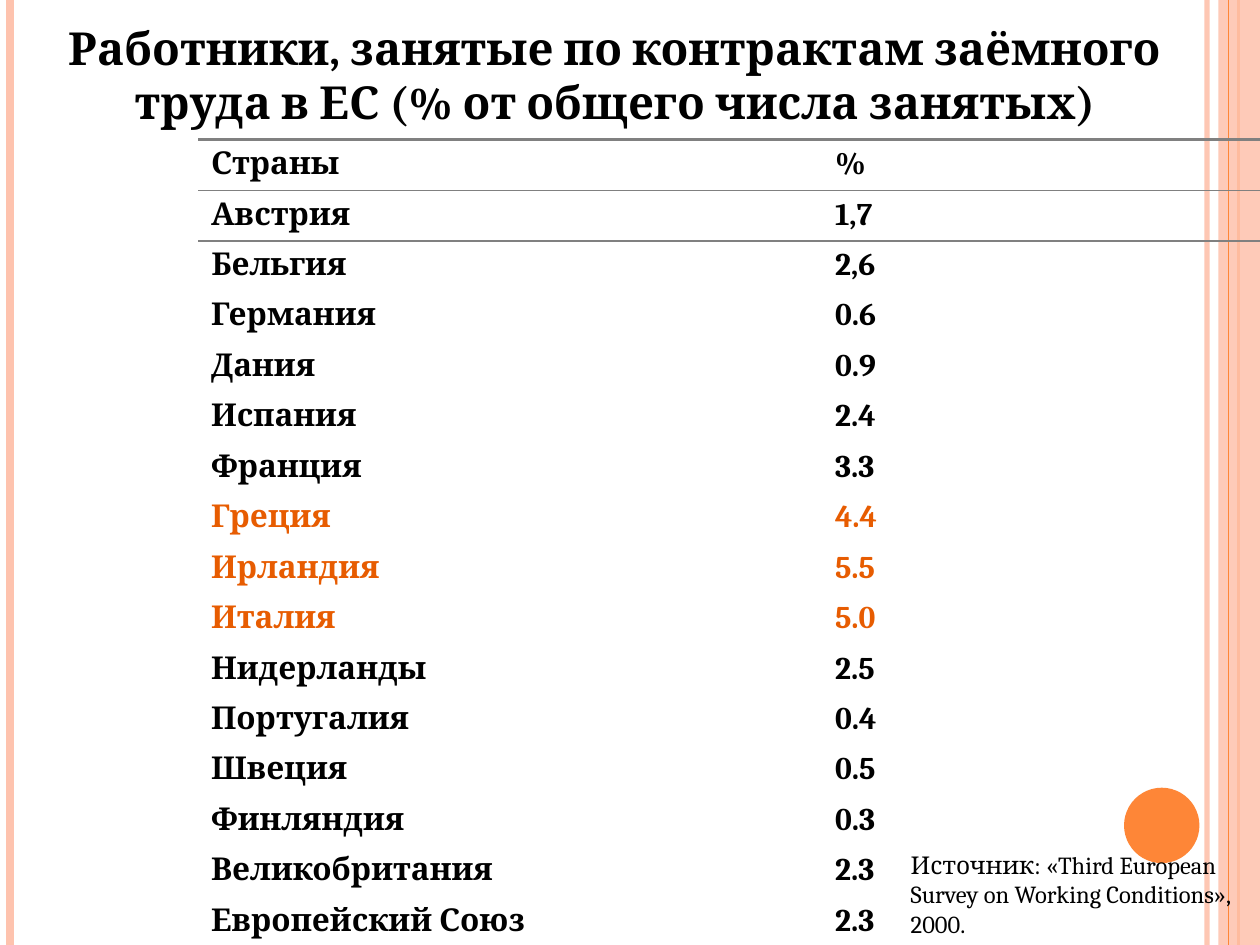
from lxml.etree import SubElement
from pptx import Presentation
from pptx.dml.color import RGBColor
from pptx.enum.shapes import MSO_CONNECTOR as Connector, MSO_SHAPE as Shape
from pptx.enum.text import MSO_ANCHOR as Anchor, PP_ALIGN as Align
from pptx.oxml.ns import qn
from pptx.util import Cm, Pt

COLORS = {"text": "000000", "accent": "E75C01", "rule": "808080",
          "orange": "FE8637", "peach": "FEC3AE"}
FONT = "Cambria"
WIDTH, HEIGHT = 25.4, 19.05
NO_STYLE = "{2D5ABB26-0587-4C30-8999-92F81FD0307C}"

TITLE = "Работники, занятые по контрактам заёмного труда в ЕС (% от общего числа занятых)"
SOURCE = "Источник: «Third European Survey on Working Conditions», 2000."
ROWS = [
    ("Страны", "%"),
    ("Австрия", "1,7"),
    ("Бельгия", "2,6"),
    ("Германия", "0.6"),
    ("Дания", "0.9"),
    ("Испания", "2.4"),
    ("Франция", "3.3"),
    ("Греция", "4.4"),
    ("Ирландия", "5.5"),
    ("Италия", "5.0"),
    ("Нидерланды", "2.5"),
    ("Португалия", "0.4"),
    ("Швеция", "0.5"),
    ("Финляндия", "0.3"),
    ("Великобритания", "2.3"),
    ("Европейский Союз", "2.3"),
]
HIGHLIGHTED = {"Греция", "Ирландия", "Италия"}
COLUMN_WIDTHS = (12.58, 8.82)
ROW_HEIGHT = 1.01
BORDERS = {0: {"lnT": 2, "lnB": 1}, 1: {"lnT": 1}, len(ROWS) - 1: {"lnB": 2}}


def rgb(name):
    return RGBColor.from_string(COLORS[name])


def set_alpha(fill_parent, percent):
    color = next(fill_parent.iter(qn("a:srgbClr")))
    SubElement(color, qn("a:alpha"), val=str(percent * 1000))


def write_text(frame, text, size=18, color="text", bold=False, align=Align.LEFT):
    paragraph = frame.paragraphs[0]
    paragraph.alignment = align
    run = paragraph.add_run()
    run.text = text
    run.font.name = FONT
    run.font.size = Pt(size)
    run.font.bold = bold
    run.font.color.rgb = rgb(color)


def add_text_box(slide, box, text, **text_format):
    frame = slide.shapes.add_textbox(*map(Cm, box)).text_frame
    frame.word_wrap = True
    frame.vertical_anchor = Anchor.MIDDLE
    write_text(frame, text, **text_format)


def add_stripe(slide, x, width, color, alpha=100):
    stripe = slide.shapes.add_connector(Connector.STRAIGHT, Cm(x), 0, Cm(x), Cm(HEIGHT))
    stripe.line.width = Pt(width)
    stripe.line.color.rgb = rgb(color)
    properties = stripe._element.spPr
    SubElement(properties, qn("a:effectLst"))
    if alpha < 100:
        set_alpha(properties, alpha)


def add_filled(slide, kind, box, color, alpha=100):
    shape = slide.shapes.add_shape(kind, *map(Cm, box))
    shape.shadow.inherit = False
    shape.fill.solid()
    shape.fill.fore_color.rgb = rgb(color)
    shape.line.fill.background()
    if alpha < 100:
        set_alpha(shape._element.spPr, alpha)


def set_borders(cell, borders):
    properties = cell._tc.get_or_add_tcPr()
    for position, (tag, width) in enumerate(borders.items()):
        line = SubElement(properties, qn(f"a:{tag}"), w=str(Pt(width)))
        fill = SubElement(line, qn("a:solidFill"))
        SubElement(fill, qn("a:srgbClr"), val=COLORS["rule"])
        properties.insert(position, line)


def add_country_table(slide):
    frame = slide.shapes.add_table(
        len(ROWS), len(COLUMN_WIDTHS), Cm(4), Cm(2.82),
        Cm(sum(COLUMN_WIDTHS)), Cm(ROW_HEIGHT * len(ROWS)))
    table = frame.table
    table.first_row = table.horz_banding = False
    next(table._tbl.iter(qn("a:tableStyleId"))).text = NO_STYLE
    for column, width in zip(table.columns, COLUMN_WIDTHS):
        column.width = Cm(width)
    for row_index, row in enumerate(ROWS):
        table.rows[row_index].height = Cm(ROW_HEIGHT)
        color = "accent" if row[0] in HIGHLIGHTED else "text"
        for column_index, text in enumerate(row):
            cell = table.cell(row_index, column_index)
            cell.fill.background()
            write_text(cell.text_frame, text, color=color, bold=True)
            set_borders(cell, BORDERS.get(row_index, {}))


def main():
    presentation = Presentation()
    presentation.slide_width, presentation.slide_height = Cm(WIDTH), Cm(HEIGHT)
    slide = presentation.slides.add_slide(presentation.slide_layouts[6])
    add_stripe(slide, 24.33, 3, "peach", alpha=93)
    add_stripe(slide, 0.21, 4.5, "peach")
    add_stripe(slide, 24.97, 1.5, "orange")
    add_filled(slide, Shape.RECTANGLE, (24.56, 0, 0.84, HEIGHT), "peach", alpha=87)
    add_stripe(slide, 24.77, 0.75, "orange")
    add_filled(slide, Shape.OVAL, (22.66, 15.88, 1.52, 1.52), "orange")
    add_text_box(slide, (0.3, 0.25, 24.2, 2.5), TITLE, size=26, bold=True, align=Align.CENTER)
    add_country_table(slide)
    add_text_box(slide, (18.11, 17, 7.29, 2.05), SOURCE, size=14)
    presentation.save("out.pptx")


if __name__ == "__main__":
    main()
